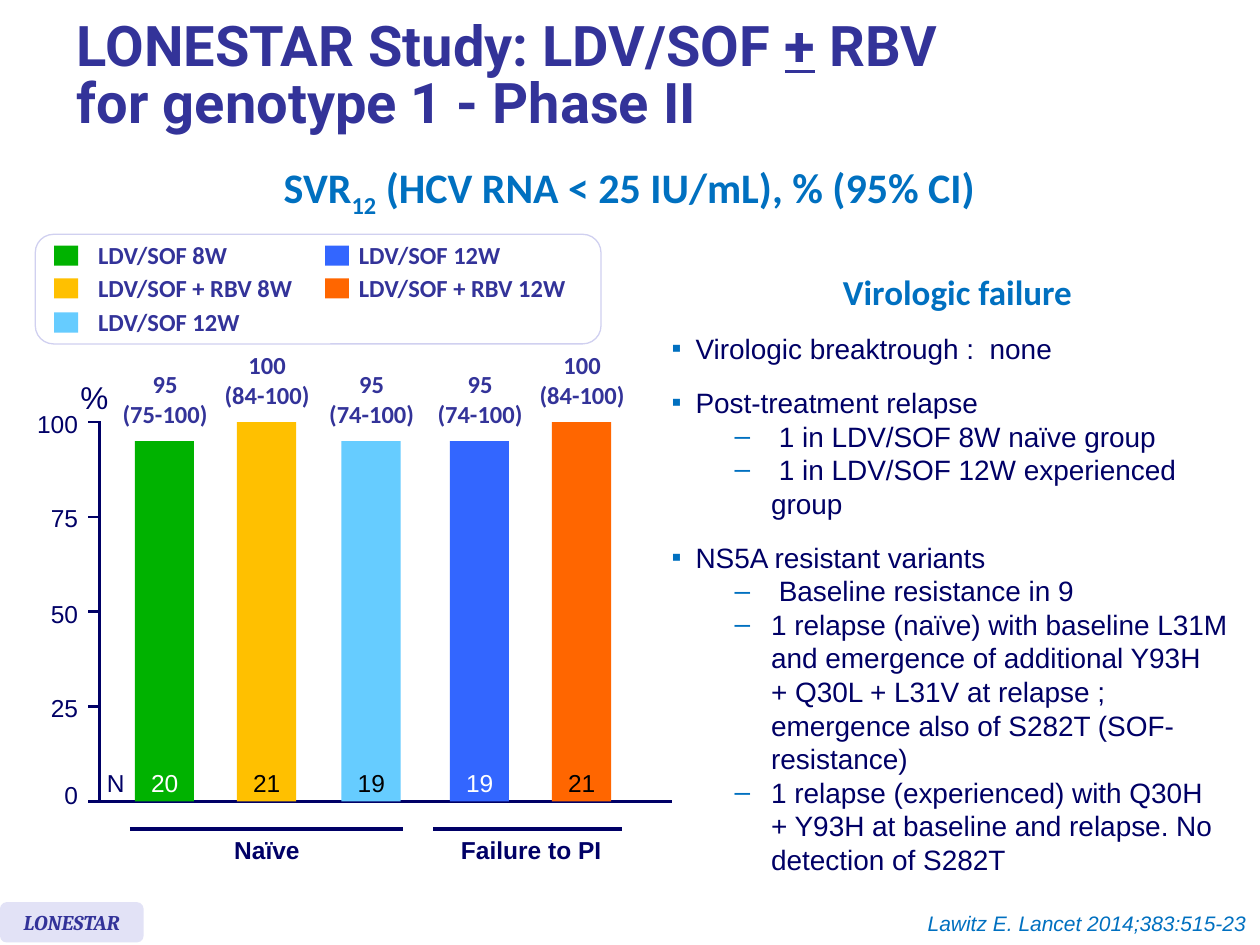
"""Build the LONESTAR study slide: SVR12 bars by treatment group and virologic failure notes."""
from lxml.etree import SubElement
from pptx import Presentation
from pptx.dml.color import RGBColor
from pptx.enum.shapes import MSO_CONNECTOR, MSO_SHAPE
from pptx.enum.text import MSO_ANCHOR, MSO_AUTO_SIZE, PP_ALIGN
from pptx.oxml.ns import qn
from pptx.util import Inches, Pt

NAVY = RGBColor(0x00, 0x00, 0x66)
INDIGO = RGBColor(0x33, 0x33, 0x99)
AZURE = RGBColor(0x00, 0x70, 0xC0)
LAVENDER = RGBColor(0xE2, 0xE2, 0xF6)
LEGEND_EDGE = RGBColor(0xD0, 0xD0, 0xF0)
WHITE = RGBColor(0xFF, 0xFF, 0xFF)
BLACK = RGBColor(0x00, 0x00, 0x00)
GREEN = RGBColor(0x00, 0xB2, 0x00)
AMBER = RGBColor(0xFF, 0xC0, 0x00)
SKY = RGBColor(0x66, 0xCC, 0xFF)
BLUE = RGBColor(0x33, 0x66, 0xFF)
ORANGE = RGBColor(0xFF, 0x66, 0x00)

AXIS = {"name": "Arial", "size": Pt(14)}
GROUP = {**AXIS, "bold": True}
LEGEND = {"name": "Calibri", "size": Pt(14), "bold": True}
HEADING = {"name": "Calibri", "size": Pt(24), "bold": True}
SUBHEADING = {**HEADING, "size": Pt(20)}
TITLE = {"name": "Roboto", "size": Pt(32), "bold": True}
BADGE = {"name": "Cambria", "size": Pt(12), "bold": True, "italic": True}
CITATION = {"name": "Arial", "size": Pt(12), "italic": True}
NOTES = {"name": "Arial", "size": Pt(16)}
LEFT, CENTER, RIGHT = PP_ALIGN.LEFT, PP_ALIGN.CENTER, PP_ALIGN.RIGHT


def write(frame, text, style, color, align=LEFT, spacing=None):
    frame.text = text
    for paragraph in frame.paragraphs:
        paragraph.alignment = align
        paragraph.line_spacing = spacing
        for run in paragraph.runs:
            for key, value in style.items():
                setattr(run.font, key, value)
            run.font.color.rgb = color


def panel(parent, kind, box, fill):
    shape = parent.add_shape(kind, *map(Inches, box))
    shape.shadow.inherit = False
    shape.fill.solid()
    shape.fill.fore_color.rgb = fill
    shape.line.fill.background()
    return shape


prs = Presentation()
prs.slide_width, prs.slide_height = Inches(10), Inches(7.5)
slide = prs.slides.add_slide(prs.slide_layouts[1])
shapes = slide.shapes
title, notes = shapes.title, slide.placeholders[1]

for holder, box in ((title, (0.51, 0.08, 9.13, 1.07)), (notes, (5.23, 2.58, 4.73, 4.48))):
    holder.left, holder.top, holder.width, holder.height = map(Inches, box)
    holder.text_frame.auto_size = MSO_AUTO_SIZE.NONE
    holder.text_frame.word_wrap = True

title.text_frame.vertical_anchor = MSO_ANCHOR.MIDDLE
write(title.text_frame, "LONESTAR Study: LDV/SOF \v", TITLE, INDIGO, spacing=0.85)
heading = title.text_frame.paragraphs[0]
heading.clear()
for part, underline in (("LONESTAR Study: LDV/SOF ", False), ("+", True), (" RBV ", False),
                        ("for genotype 1 - Phase II", False)):
    if part.startswith("for"):
        heading.add_line_break()
    run = heading.add_run()
    run.text = part
    for key, value in {**TITLE, "underline": underline}.items():
        setattr(run.font, key, value)
    run.font.color.rgb = INDIGO

endpoint = shapes.add_textbox(Inches(2.05), Inches(1.36), Inches(5.89), Inches(0.44)).text_frame
write(endpoint, "SVR", HEADING, AZURE, CENTER, Pt(23.6))
for part, baseline in (("12", "-25000"), (" (HCV RNA < 25 IU/mL), % (95% CI)", "0")):
    run = endpoint.paragraphs[0].add_run()
    run.text = part
    for key, value in HEADING.items():
        setattr(run.font, key, value)
    run.font.color.rgb = AZURE
    run.font._element.set("baseline", baseline)

legend = shapes.add_group_shape().shapes
frame = panel(legend, MSO_SHAPE.ROUNDED_RECTANGLE, (0.28, 1.86, 4.49, 0.87), WHITE)
frame.line.color.rgb = LEGEND_EDGE
frame.line.width = Pt(0.75)
for name, color, swatch_left, name_left, top, width in (
    ("LDV/SOF 8W", GREEN, 0.43, 0.68, 1.86, 1.25),
    ("LDV/SOF + RBV 8W", AMBER, 0.43, 0.68, 2.12, 1.77),
    ("LDV/SOF 12W", SKY, 0.43, 0.68, 2.39, 1.35),
    ("LDV/SOF 12W", BLUE, 2.58, 2.75, 1.86, 1.35),
    ("LDV/SOF + RBV 12W", ORANGE, 2.58, 2.75, 2.12, 1.87),
):
    panel(legend, MSO_SHAPE.RECTANGLE, (swatch_left, top + 0.09, 0.19, 0.16), color)
    entry = legend.add_textbox(Inches(name_left), Inches(top), Inches(width), Inches(0.34))
    write(entry.text_frame, name, LEGEND, INDIGO)

BASE, FULL = 6.36, 3.01
rules = [(0.79, BASE - FULL, 0.79, BASE, 1.5), (0.7, BASE, 5.33, BASE, 1.5),
         (1.03, 6.58, 3.2, 6.58, 2), (3.44, 6.58, 4.94, 6.58, 2)]
for tick, top in ((0, 6.19), (25, 5.5), (50, 4.75), (75, 3.99), (100, 3.24)):
    width = 0.11 * len(str(tick))
    scale = shapes.add_textbox(Inches(0.62 - width), Inches(top), Inches(width), Inches(0.24)).text_frame
    scale.margin_left = scale.margin_right = scale.margin_top = scale.margin_bottom = 0
    scale.vertical_anchor = MSO_ANCHOR.MIDDLE
    write(scale, str(tick), AXIS, NAVY, RIGHT)
    if tick:
        level = BASE - FULL * tick / 100
        rules.append((0.7, level, 0.8, level, 1.5))

for *ends, weight in rules:
    rule = shapes.add_connector(MSO_CONNECTOR.STRAIGHT, *map(Inches, ends))
    rule.line.color.rgb = NAVY
    rule.line.width = Pt(weight)
    SubElement(rule._element.spPr, qn("a:effectLst"))

for left, rate, interval, patients, fill, ink in (
    (1.07, 95, "(75-100)", 20, GREEN, WHITE),
    (1.88, 100, "(84-100)", 21, AMBER, BLACK),
    (2.71, 95, "(74-100)", 19, SKY, BLACK),
    (3.57, 95, "(74-100)", 19, BLUE, WHITE),
    (4.38, 100, "(84-100)", 21, ORANGE, BLACK),
):
    height = FULL * rate / 100
    panel(shapes, MSO_SHAPE.RECTANGLE, (left, BASE - height, 0.47, height), fill)
    result = shapes.add_textbox(Inches(left - 0.2), Inches(BASE - height - 0.67),
                                Inches(0.88), Inches(0.67)).text_frame
    result.margin_left = result.margin_right = result.margin_top = result.margin_bottom = Inches(0.1)
    write(result, f"{rate}\n{interval}", LEGEND, INDIGO, CENTER)
    count = shapes.add_textbox(Inches(left + 0.03), Inches(6.05), Inches(0.42), Inches(0.34))
    write(count.text_frame, str(patients), AXIS, ink)

for text, box, style, color, align, spacing in (
    ("%", (0.54, 2.95, 0.42, 0.4), {**AXIS, "size": Pt(18)}, NAVY, LEFT, None),
    ("N", (0.75, 6.05, 0.34, 0.34), AXIS, NAVY, LEFT, None),
    ("Naïve", (1.76, 6.58, 0.72, 0.34), GROUP, NAVY, LEFT, None),
    ("Failure to PI", (3.56, 6.58, 1.32, 0.34), GROUP, NAVY, LEFT, None),
    ("Virologic failure", (6.58, 2.1, 2.04, 0.44), SUBHEADING, AZURE, CENTER, Pt(23.6)),
    ("Lawitz E. Lancet 2014;383:515-23", (7.2, 7.18, 2.79, 0.3), CITATION, AZURE, RIGHT, None),
):
    caption = shapes.add_textbox(*map(Inches, box))
    write(caption.text_frame, text, style, color, align, spacing)

badge = panel(shapes, MSO_SHAPE.ROUNDED_RECTANGLE, (0, 7.16, 1.14, 0.32), LAVENDER)
badge.text_frame.word_wrap = False
badge.text_frame.vertical_anchor = MSO_ANCHOR.MIDDLE
write(badge.text_frame, "LONESTAR", BADGE, INDIGO, CENTER)

findings = (
    (0, "Virologic breaktrough :  none"),
    (0, "Post-treatment relapse"),
    (1, " 1 in LDV/SOF 8W naïve group"),
    (1, " 1 in LDV/SOF 12W experienced group"),
    (0, "NS5A resistant variants"),
    (1, " Baseline resistance in 9"),
    (1, "1 relapse (naïve) with baseline L31M and emergence of additional Y93H \v"
        "+ Q30L + L31V at relapse ; emergence also of S282T (SOF-resistance)"),
    (1, "1 relapse (experienced) with Q30H \v+ Y93H at baseline and relapse. No detection of S282T"),
)
write(notes.text_frame, "\n".join(text.replace("\v", "\v") for _, text in findings), NOTES, NAVY, spacing=Pt(19.2))
for index, (paragraph, (level, _)) in enumerate(zip(notes.text_frame.paragraphs, findings)):
    paragraph.level = level
    paragraph.space_before = Pt(11.7 if index and level == 0 else 0)
    margin, hang, mark = ((0.19, 0.19, "▪"), (0.79, 0.29, "–"))[level]
    props = paragraph._p.get_or_add_pPr()
    props.set("marL", str(Inches(margin)))
    props.set("indent", str(-Inches(hang)))
    SubElement(SubElement(props, qn("a:buClr")), qn("a:srgbClr"), val=str(AZURE))
    SubElement(props, qn("a:buFont"), typeface="Arial")
    SubElement(props, qn("a:buChar"), char=mark)

prs.save("out.pptx")
